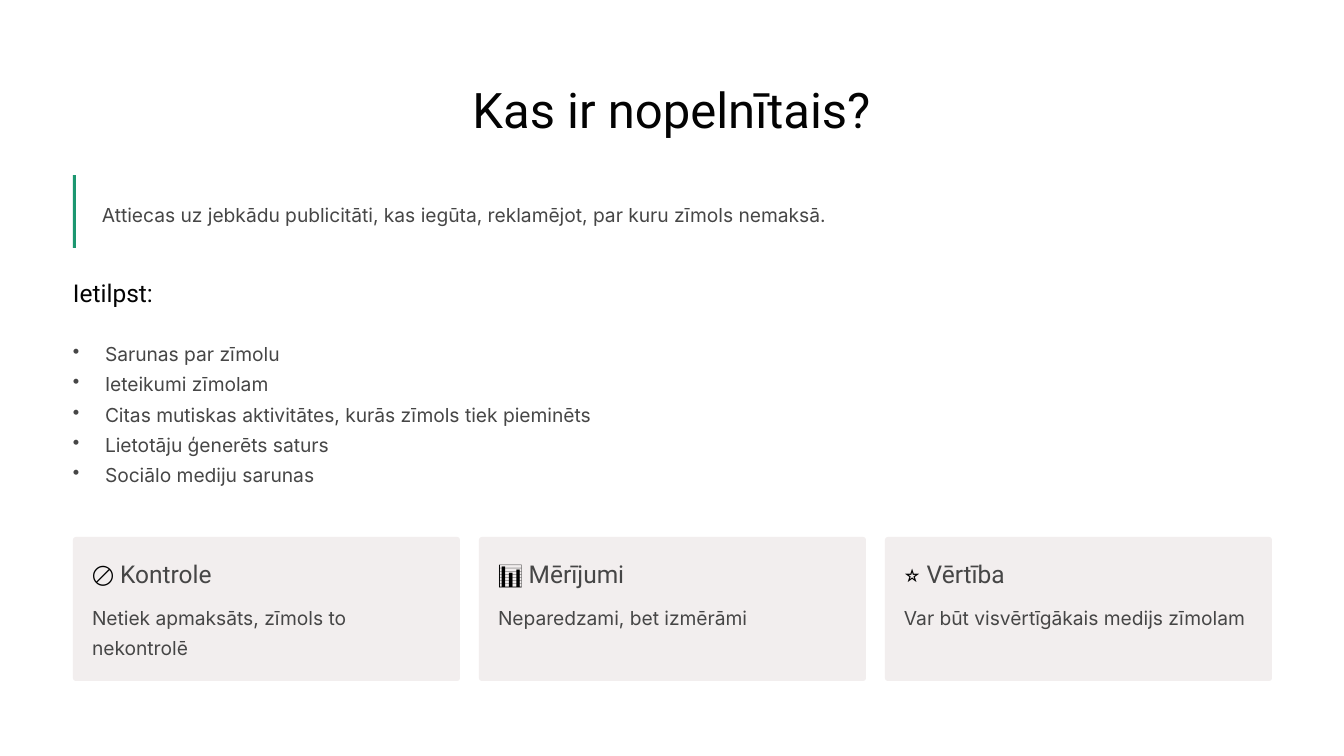
from dataclasses import dataclass

from lxml import etree
from pptx import Presentation
from pptx import util as u
from pptx.dml.color import RGBColor
from pptx.enum import shapes, text
from pptx.oxml.ns import qn

HUES = {"paper": "FFFFFF", "title": "030303", "body": "464646",
        "icon": "000000", "bar": "1C9770", "card": "F2EEEE"}


@dataclass(frozen=True)
class Style:
    font: str
    size: float
    hue: str
    line: float


@dataclass(frozen=True)
class Card:
    icon: str
    name: str
    body: str


TITLE = Style("Roboto", 42, "title", 53)
HEAD = Style("Roboto", 21, "title", 26.5)
BODY = Style("Inter", 16.5, "body", 26)
LABEL = Style("Roboto", 21, "body", 26.5)

POINTS = [
    "Sarunas par zīmolu",
    "Ieteikumi zīmolam",
    "Citas mutiskas aktivitātes, kurās zīmols tiek pieminēts",
    "Lietotāju ģenerēts saturs",
    "Sociālo mediju sarunas",
]
CARDS = [
    Card("🚫", "Kontrole", "Netiek apmaksāts, zīmols to nekontrolē"),
    Card("📊", "Mērījumi", "Neparedzami, bet izmērāmi"),
    Card("⭐", "Vērtība", "Var būt visvērtīgākais medijs zīmolam"),
]
LEFT, WIDE = 73, 1198
CARD_TOP, CARD_W, CARD_H, PITCH, PAD = 537, 387, 144, 406, 19
INDENT = 32


def px(n: int) -> u.Emu:
    return u.Emu(round(n * u.Inches(1) / 84))


def rgb(hue: str) -> RGBColor:
    return RGBColor.from_string(HUES[hue])


def style_text(frame, style: Style) -> None:
    """Clear the margins and format every paragraph and run."""
    frame.word_wrap = True
    frame.auto_size = text.MSO_AUTO_SIZE.NONE
    frame.vertical_anchor = text.MSO_ANCHOR.TOP
    frame.margin_left = frame.margin_right = 0
    frame.margin_top = frame.margin_bottom = 0
    for para in frame.paragraphs:
        para.line_spacing = u.Pt(style.line)
        for run in para.runs:
            run.font.name = style.font
            run.font.size = u.Pt(style.size)
            run.font.color.rgb = rgb(style.hue)


def add_text(slide, x: int, y: int, w: int, h: int, words: str, style: Style):
    frame = slide.shapes.add_textbox(px(x), px(y), px(w), px(h)).text_frame
    frame.text = words
    style_text(frame, style)
    return frame


def add_box(slide, kind, x: int, y: int, w: int, h: int, hue: str):
    box = slide.shapes.add_shape(kind, px(x), px(y), px(w), px(h))
    box.shadow.inherit = False
    box.fill.solid()
    box.fill.fore_color.rgb = rgb(hue)
    box.line.fill.background()
    return box


def add_bullet(para) -> None:
    props = para._p.get_or_add_pPr()
    props.set("marL", str(px(INDENT)))
    props.set("indent", str(-px(INDENT)))
    etree.SubElement(props, qn("a:buChar")).set("char", "•")


def add_card(slide, x: int, card: Card) -> None:
    box = add_box(slide, shapes.MSO_SHAPE.ROUNDED_RECTANGLE,
                  x, CARD_TOP, CARD_W, CARD_H, "card")
    box.adjustments[0] = 0.02
    inner = CARD_W - 2 * PAD - 2
    frame = add_text(slide, x + PAD, CARD_TOP + 20, inner, 31, card.icon, LABEL)
    para = frame.paragraphs[0]
    para.add_run().text = f" {card.name}"
    style_text(frame, LABEL)
    para.runs[0].font.color.rgb = rgb("icon")
    add_text(slide, x + PAD, CARD_TOP + 62, inner, 62, card.body, BODY)


def main() -> None:
    deck = Presentation()
    deck.slide_width, deck.slide_height = u.Inches(16), u.Inches(9)
    slide = deck.slides.add_slide(deck.slide_layouts[5])
    slide.background.fill.solid()
    slide.background.fill.fore_color.rgb = rgb("paper")

    title = slide.shapes.title
    title.left, title.top = px(424), px(76)
    title.width, title.height = px(495), px(62)
    title.text_frame.text = "Kas ir nopelnītais?"
    style_text(title.text_frame, TITLE)
    title.text_frame.paragraphs[0].alignment = text.PP_ALIGN.CENTER

    add_text(slide, 102, 196, 1168, 31,
             "Attiecas uz jebkādu publicitāti, kas iegūta, reklamējot, "
             "par kuru zīmols nemaksā.", BODY)
    add_box(slide, shapes.MSO_SHAPE.RECTANGLE, LEFT, 175, 3, 73, "bar")
    add_text(slide, LEFT, 276, 248, 31, "Ietilpst:", HEAD)

    points = add_text(slide, LEFT, 335, WIDE, 181, "\n".join(POINTS), BODY)
    for para in points.paragraphs:
        add_bullet(para)

    for i, card in enumerate(CARDS):
        add_card(slide, LEFT + i * PITCH, card)

    deck.save("out.pptx")


if __name__ == "__main__":
    main()
